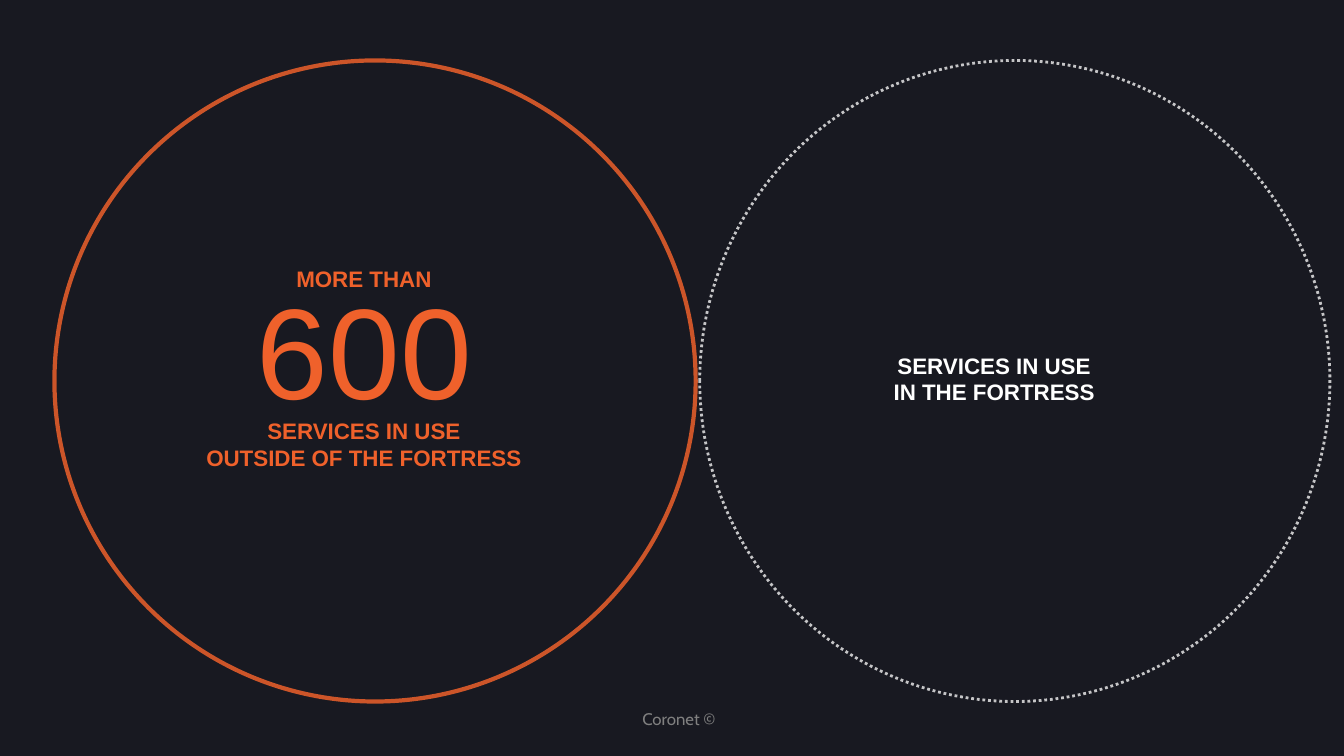
from dataclasses import dataclass

from lxml.etree import SubElement
from pptx import Presentation
from pptx.dml.color import RGBColor
from pptx.enum.dml import MSO_LINE_DASH_STYLE as Dash
from pptx.enum.shapes import MSO_SHAPE as Shape
from pptx.enum.text import MSO_ANCHOR as Anchor, MSO_AUTO_SIZE as AutoSize, PP_ALIGN as Align
from pptx.oxml.ns import qn
from pptx.slide import Slide
from pptx.util import Inches, Pt

ORANGE = "EF612B"
WHITE = "FFFFFF"
GREY = "808080"
BACKGROUND = "181921"


@dataclass
class Ring:
    left: float
    width: float
    color: str
    weight: float
    dash: Dash
    opacity: int
    top: float = 0.6
    height: float = 6.36


@dataclass
class Label:
    lines: list[str]
    left: float
    top: float
    width: float
    height: float
    color: str
    size: int = 16
    bold: bool = True
    font: str = "Arial"
    spacing: int | None = None
    wrap: bool = False
    anchor: Anchor = Anchor.TOP


RINGS = [
    Ring(0.54, 6.36, ORANGE, 3, Dash.SOLID, 84),
    Ring(6.94, 6.25, WHITE, 2, Dash.ROUND_DOT, 75),
]

LABELS = [
    Label(["Coronet ©"], 6.28, 6.99, 0.91, 0.29, GREY, size=12, bold=False,
          font="Cabin", wrap=True, anchor=Anchor.BOTTOM),
    Label(["MORE THAN"], 2.88, 2.58, 1.46, 0.34, ORANGE),
    Label(["600"], 2.49, 2.89, 2.25, 1.39, ORANGE, size=92, bold=False, spacing=92),
    Label(["SERVICES IN USE", "OUTSIDE OF THE FORTRESS"], 1.98, 4.09, 3.26, 0.64, ORANGE),
    Label(["SERVICES IN USE", "IN THE FORTRESS"], 8.8, 3.44, 2.12, 0.64, WHITE),
]


def rgb(color: str) -> RGBColor:
    return RGBColor.from_string(color)


def draw_ring(page: Slide, ring: Ring) -> None:
    circle = page.shapes.add_shape(Shape.OVAL, Inches(ring.left), Inches(ring.top),
                                   Inches(ring.width), Inches(ring.height))
    circle.shadow.inherit = False
    circle.fill.background()
    circle.line.color.rgb = rgb(ring.color)
    circle.line.width = Pt(ring.weight)
    circle.line.dash_style = ring.dash
    line_color = circle.line._ln.find(".//" + qn("a:srgbClr"))
    SubElement(line_color, qn("a:alpha")).set("val", str(ring.opacity * 1000))


def draw_label(page: Slide, label: Label) -> None:
    box = page.shapes.add_textbox(Inches(label.left), Inches(label.top),
                                  Inches(label.width), Inches(label.height))
    frame = box.text_frame
    frame.word_wrap = label.wrap
    frame.auto_size = AutoSize.SHAPE_TO_FIT_TEXT
    frame.vertical_anchor = label.anchor
    frame.margin_left = frame.margin_right = Inches(0.05)
    frame.margin_top = frame.margin_bottom = Inches(0.05)
    for index, line in enumerate(label.lines):
        para = frame.add_paragraph() if index else frame.paragraphs[0]
        para.alignment = Align.CENTER
        if label.spacing:
            para.line_spacing = Pt(label.spacing)
        span = para.add_run()
        span.text = line
        span.font.name = label.font
        span.font.size = Pt(label.size)
        span.font.bold = label.bold
        span.font.color.rgb = rgb(label.color)


def main() -> None:
    deck = Presentation()
    deck.slide_width = Inches(13.33)
    deck.slide_height = Inches(7.5)
    page = deck.slides.add_slide(deck.slide_layouts[6])
    page.background.fill.solid()
    page.background.fill.fore_color.rgb = rgb(BACKGROUND)
    for ring in RINGS:
        draw_ring(page, ring)
    for label in LABELS:
        draw_label(page, label)
    deck.save("out.pptx")


if __name__ == "__main__":
    main()
